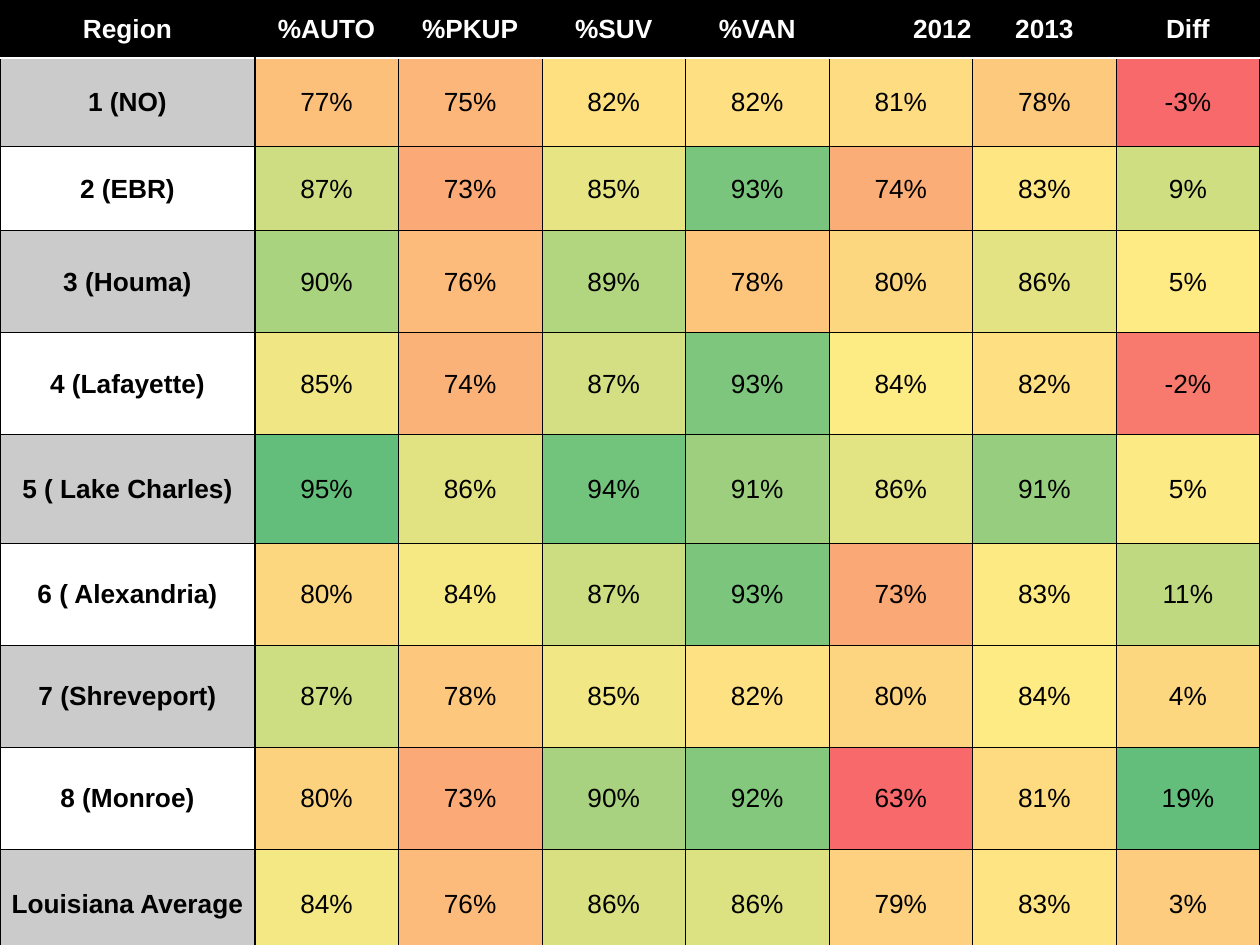
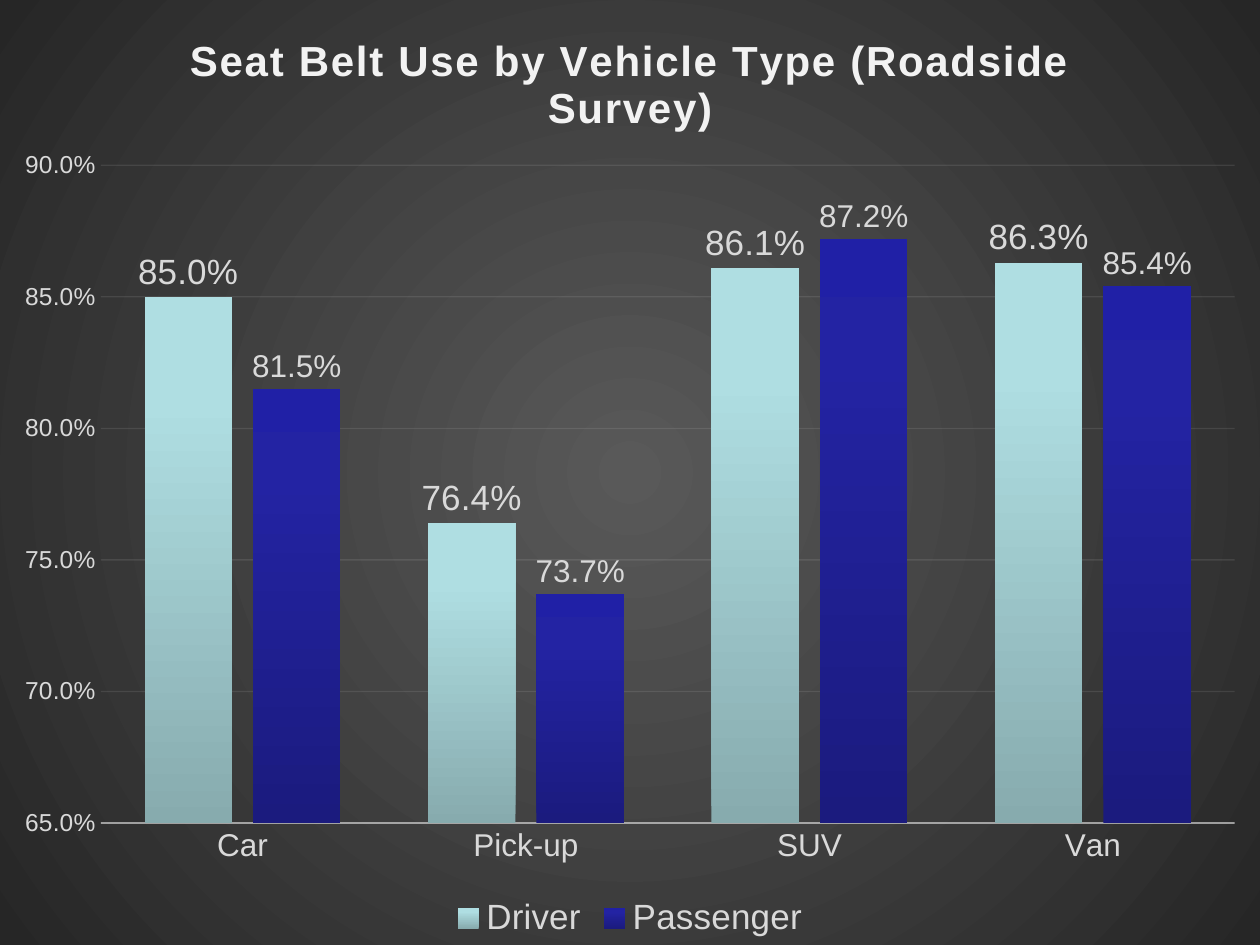
from lxml.etree import SubElement
from pptx import Presentation
from pptx.chart.data import CategoryChartData
from pptx.dml.color import RGBColor
from pptx.enum.chart import XL_CHART_TYPE, XL_LABEL_POSITION, XL_LEGEND_POSITION, XL_TICK_MARK
from pptx.enum.text import MSO_ANCHOR, PP_ALIGN
from pptx.oxml import parse_xml
from pptx.oxml.ns import nsdecls, qn
from pptx.util import Pt

FACE = "Arial"
BLACK, WHITE, GREY = "000000", "FFFFFF", "CBCBCB"
PALE, SOFT = "D9D9D9", "F2F2F2"
WIDE, HIGH = 720, 540

HEADS = ["Region", "%AUTO", "%PKUP", "%SUV", "%VAN", "2012", "2013", "Diff"]
COLS = [145.6] + [82.06] * 7
ROWS = [33.12, 50.4, 48.24, 58.32, 58.32, 61.92, 58.32, 58.32, 58.32, 61.92]
RATES = {
    "1 (NO)": "77 FCC07B 75 FCB679 82 FEE081 82 FEDF81 81 FEDC81 78 FDC97D -3 F8696B",
    "2 (EBR)": "87 CEDD82 73 FBAA77 85 E6E483 93 7AC57D 74 FBAD78 83 FEE683 9 D0DE82",
    "3 (Houma)": "90 AAD380 76 FCBB7A 89 B2D580 78 FDC57C 80 FDD780 86 E3E383 5 FFEB84",
    "4 (Lafayette)": "85 F0E784 74 FBB279 87 D3DF82 93 7EC67D 84 FDEB84 82 FEDF81 -2 F87A6E",
    "5 ( Lake Charles)": "95 63BE7B 86 E1E383 94 72C37C 91 9DCF7F 86 E2E383 91 96CD7E 5 FCEA84",
    "6 ( Alexandria)": "80 FDD680 84 F6E984 87 CBDC81 93 7BC57D 73 FBA877 83 FEEA83 11 BFD981",
    "7 (Shreveport)": "87 CDDD82 78 FDC77D 85 F1E784 82 FEE182 80 FDD47F 84 FEEB84 4 FDD680",
    "8 (Monroe)": "80 FDD27F 73 FBAA77 90 A8D27F 92 84C87D 63 F8696B 81 FEDB81 19 63BE7B",
    "Louisiana Average": "84 F4E884 76 FCBB7A 86 D8E082 86 DCE182 79 FDD17F 83 FEE482 3 FDCC7E",
}

TITLE = "Seat Belt Use by Vehicle Type (Roadside Survey)"
TYPES = ["Car", "Pick-up", "SUV", "Van"]
BELTS = [
    ("Driver", [0.85, 0.764, 0.861, 0.863], 20, [(0, "87ABAE"), (80, "AFDEE2"), (100, "AFE0E4")]),
    ("Passenger", [0.815, 0.737, 0.872, 0.854], 18, [(0, "1B1B7E"), (80, "2323A3"), (100, "2020A6")]),
]
BACK = [(0, "595959"), (100, "262626")]
GLOW = '<a:path path="circle"><a:fillToRect l="50000" t="50000" r="50000" b="50000"/></a:path>'
RISE = '<a:lin ang="16200000" scaled="0"/>'
PLOT = {"x": 0.08, "y": 0.175, "w": 0.9, "h": 0.696}


def put(item, **vals):
    """Set each named value on the item."""
    for name, val in vals.items():
        setattr(item, name, val)


def paint(fill, hue):
    """Give a fill one solid colour."""
    fill.solid()
    fill.fore_color.rgb = RGBColor.from_string(hue)


def style(font, size, hue, bold=False):
    """Set face, size, weight and colour of a font."""
    put(font, name=FACE, size=Pt(size), bold=bold)
    paint(font.fill, hue)


def blend(stops, way):
    """Build a gradient fill from its stops and its direction."""
    marks = "".join(f'<a:gs pos="{at * 1000}"><a:srgbClr val="{hue}"/></a:gs>' for at, hue in stops)
    return parse_xml(f'<a:gradFill {nsdecls("a")} rotWithShape="1"><a:gsLst>{marks}</a:gsLst>{way}</a:gradFill>')


def edge(cell, sides):
    """Draw the left, right, top and bottom borders of a cell."""
    props = cell._tc.get_or_add_tcPr()
    for spot, (side, (hue, width)) in enumerate(zip("LRTB", sides)):
        props.insert(spot, parse_xml(
            f'<a:ln{side} {nsdecls("a")} w="{Pt(width)}"><a:solidFill>'
            f'<a:srgbClr val="{hue}"/></a:solidFill></a:ln{side}>'))


def write(cell, text, back, hue=BLACK, bold=False, align=PP_ALIGN.CENTER):
    """Fill a table cell with colour and one line of text."""
    paint(cell.fill, back)
    put(cell, vertical_anchor=MSO_ANCHOR.MIDDLE, margin_left=Pt(0.72),
        margin_right=Pt(0.72), margin_top=Pt(0.72), margin_bottom=0)
    para = cell.text_frame.paragraphs[0]
    para.alignment = align
    run = para.add_run()
    run.text = text
    style(run.font, 15, hue, bold)


def frame(grid):
    """Rule the grid, with heavier lines by the head row and first column."""
    thin, thick, gap = (BLACK, 0.5), (BLACK, 1.5), (WHITE, 1.5)
    for row in range(len(ROWS)):
        for col in range(len(COLS)):
            left = thick if col == 1 and row else thin
            right = thick if col == 0 and row else thin
            top = gap if row == 1 else thin
            base = gap if row == 0 else thin
            edge(grid.cell(row, col), (left, right, top, base))


def heatmap(slide):
    """Add the table of belt use by region."""
    grid = slide.shapes.add_table(len(ROWS), len(COLS), 0, 0, Pt(WIDE), Pt(sum(ROWS))).table
    put(grid, first_row=False, horz_banding=False)
    for col, width in zip(grid.columns, COLS):
        col.width = Pt(width)
    for row, height in zip(grid.rows, ROWS):
        row.height = Pt(height)
    for col, head in enumerate(HEADS):
        align = PP_ALIGN.RIGHT if head == "2012" else PP_ALIGN.CENTER
        write(grid.cell(0, col), head, BLACK, WHITE, True, align)
    for row, (name, line) in enumerate(RATES.items(), 1):
        write(grid.cell(row, 0), name, GREY if row % 2 else WHITE, bold=True)
        parts = line.split()
        for col, (rate, hue) in enumerate(zip(parts[::2], parts[1::2]), 1):
            write(grid.cell(row, col), f"{rate}%", hue)
    frame(grid)


def rule(line, width, alpha):
    """Make a soft line, seen through by the given percentage."""
    line.width = Pt(width)
    paint(line.fill, SOFT)
    tint = line._ln.find(".//" + qn("a:srgbClr"))
    SubElement(tint, qn("a:alpha"), val=str(alpha * 1000))


def axes(chart):
    """Format both axes and the grid lines."""
    cat, val = chart.category_axis, chart.value_axis
    for axis, size in ((cat, 18), (val, 14)):
        put(axis, major_tick_mark=XL_TICK_MARK.NONE, minor_tick_mark=XL_TICK_MARK.NONE)
        style(axis.tick_labels.font, size, PALE)
    put(val, minimum_scale=0.65, maximum_scale=0.9, major_unit=0.05, has_major_gridlines=True)
    put(val.tick_labels, number_format="0.0%", number_format_is_linked=False)
    val.format.line.fill.background()
    rule(cat.format.line, 1, 54)
    rule(val.major_gridlines.format.line, 0.75, 10)


def bars(chart):
    """Colour and label the bars of each series."""
    plot = chart.plots[0]
    put(plot, gap_width=100, overlap=-24, vary_by_categories=False)
    for group, (_, _, size, stops) in zip(plot.series, BELTS):
        group.format.fill.solid()
        old = group._element.find(qn("c:spPr")).find(qn("a:solidFill"))
        old.getparent().replace(old, blend(stops, RISE))
        tags = group.data_labels
        put(tags, show_value=True, number_format="0.0%", number_format_is_linked=False,
            position=XL_LABEL_POSITION.OUTSIDE_END)
        style(tags.font, size, PALE)


def place(chart):
    """Fix the inner plot area and lay the glow behind the chart."""
    area = chart.element.find(".//" + qn("c:plotArea"))
    for old in area.findall(qn("c:layout")):
        area.remove(old)
    spots = "".join(f'<c:{key}Mode val="edge"/>' for key in "xy")
    spots += "".join(f'<c:{key} val="{val}"/>' for key, val in PLOT.items())
    area.insert(0, parse_xml(
        f'<c:layout {nsdecls("c")}><c:manualLayout><c:layoutTarget val="inner"/>'
        f'{spots}</c:manualLayout></c:layout>'))
    back = parse_xml(f'<c:spPr {nsdecls("c", "a")}><a:ln><a:noFill/></a:ln></c:spPr>')
    back.insert(0, blend(BACK, GLOW))
    chart.element.find(qn("c:chart")).addnext(back)


def belts(slide):
    """Add the column chart of belt use by vehicle type."""
    data = CategoryChartData(number_format="0.0%")
    data.categories = TYPES
    for name, vals, _, _ in BELTS:
        data.add_series(name, vals)
    chart = slide.shapes.add_chart(
        XL_CHART_TYPE.COLUMN_CLUSTERED, 0, 0, Pt(WIDE), Pt(HIGH), data).chart
    style(chart.font, 10, BLACK)
    put(chart, has_title=True, has_legend=True)
    run = chart.chart_title.text_frame.paragraphs[0].add_run()
    run.text = TITLE
    style(run.font, 24, SOFT, True)
    run._r.get_or_add_rPr().set("spc", "100")
    put(chart.chart_title, include_in_layout=False)
    put(chart.legend, position=XL_LEGEND_POSITION.BOTTOM, include_in_layout=False)
    style(chart.legend.font, 20, PALE)
    axes(chart)
    bars(chart)
    place(chart)


def main():
    """Build both slides and save them."""
    deck = Presentation()
    put(deck, slide_width=Pt(WIDE), slide_height=Pt(HIGH))
    for build in (heatmap, belts):
        build(deck.slides.add_slide(deck.slide_layouts[6]))
    deck.save("out.pptx")


if __name__ == "__main__":
    main()
